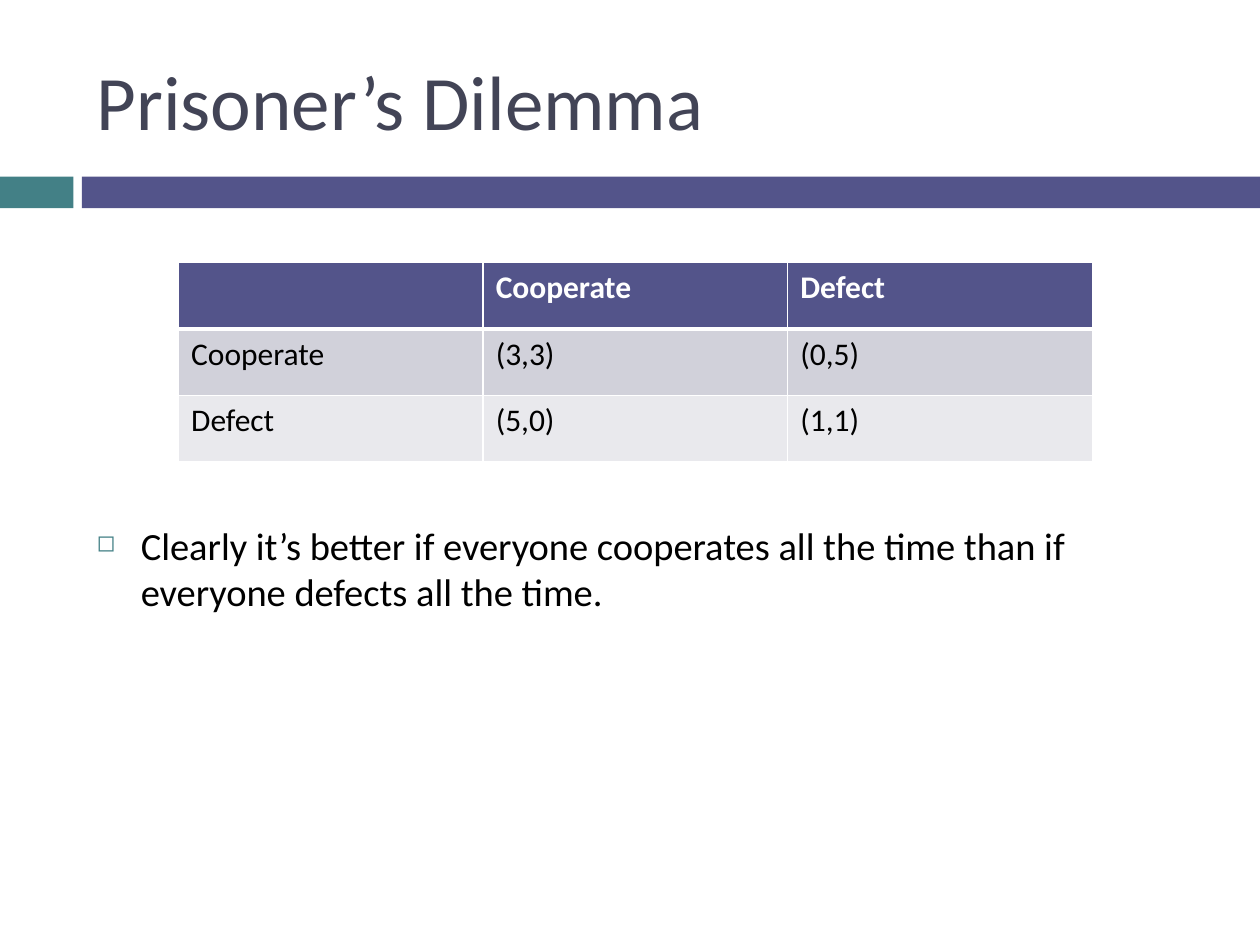
from lxml import etree
from pptx import Presentation
from pptx.dml.color import RGBColor
from pptx.enum import shapes, text
from pptx.oxml import ns
from pptx.util import Cm, Pt

TEAL = RGBColor(0x43, 0x80, 0x86)
PURPLE = RGBColor(0x53, 0x54, 0x8A)
SLATE = RGBColor(0x42, 0x44, 0x56)
MID = RGBColor(0xD1, 0xD1, 0xDA)
PALE = RGBColor(0xE9, 0xE9, 0xED)
WHITE = RGBColor(0xFF, 0xFF, 0xFF)
BLACK = RGBColor(0, 0, 0)


def write(frame, words, size=18, color=BLACK, bold=False):
    frame.word_wrap = True
    para = frame.paragraphs[0]
    run = para.add_run()
    run.text = words
    run.font.name = "Calibri"
    run.font.size = Pt(size)
    run.font.bold = bold
    run.font.color.rgb = color
    return para


def add(parent, tag, **attrs):
    node = etree.SubElement(parent, ns.qn(tag))
    for key, value in attrs.items():
        node.set(key, str(value))
    return node


deck = Presentation()
deck.slide_width = Cm(25.4)
deck.slide_height = Cm(19.05)
slide = deck.slides.add_slide(deck.slide_layouts[6])

for left, width, color in [(0, 1.48, TEAL), (1.65, 23.75, PURPLE)]:
    bar = slide.shapes.add_shape(
        shapes.MSO_SHAPE.RECTANGLE, Cm(left), Cm(3.56), Cm(width), Cm(0.64))
    bar.shadow.inherit = False
    bar.fill.solid()
    bar.fill.fore_color.rgb = color
    bar.line.fill.background()

title = slide.shapes.add_textbox(Cm(1.7), Cm(0.64), Cm(22.65), Cm(2.75))
title.text_frame.vertical_anchor = text.MSO_ANCHOR.MIDDLE
write(title.text_frame, "Prisoner’s Dilemma", size=44, color=SLATE)

rows = [
    ("", "Cooperate", "Defect"),
    ("Cooperate", "(3,3)", "(0,5)"),
    ("Defect", "(5,0)", "(1,1)"),
]
fills = [PURPLE, MID, PALE]
grid = slide.shapes.add_table(
    3, 3, Cm(3.6), Cm(5.29), Cm(18.42), Cm(4.02)).table
for i, row in enumerate(rows):
    for j, words in enumerate(row):
        cell = grid.cell(i, j)
        if words:
            write(cell.text_frame, words, bold=i == 0,
                  color=WHITE if i == 0 else BLACK)
        props = cell._tc.get_or_add_tcPr()
        for side in "LRTB":
            thick = (i, side) in [(0, "B"), (1, "T")]
            line = add(props, f"a:ln{side}", w=Pt(3 if thick else 1))
            add(add(line, "a:solidFill"), "a:srgbClr", val=WHITE)
        cell.fill.solid()
        cell.fill.fore_color.rgb = fills[i]

body = slide.shapes.add_textbox(Cm(1.7), Cm(10.39), Cm(22.65), Cm(6.54))
para = write(
    body.text_frame,
    "Clearly it’s better if everyone cooperates all the time "
    "than if everyone defects all the time.",
    size=22)
props = para._p.get_or_add_pPr()
props.set("marL", str(Cm(0.89)))
props.set("indent", str(Cm(-0.89)))
add(add(props, "a:buClr"), "a:srgbClr", val=TEAL)
add(props, "a:buSzPct", val=60000)
add(props, "a:buChar", char="◻")

deck.save("out.pptx")
